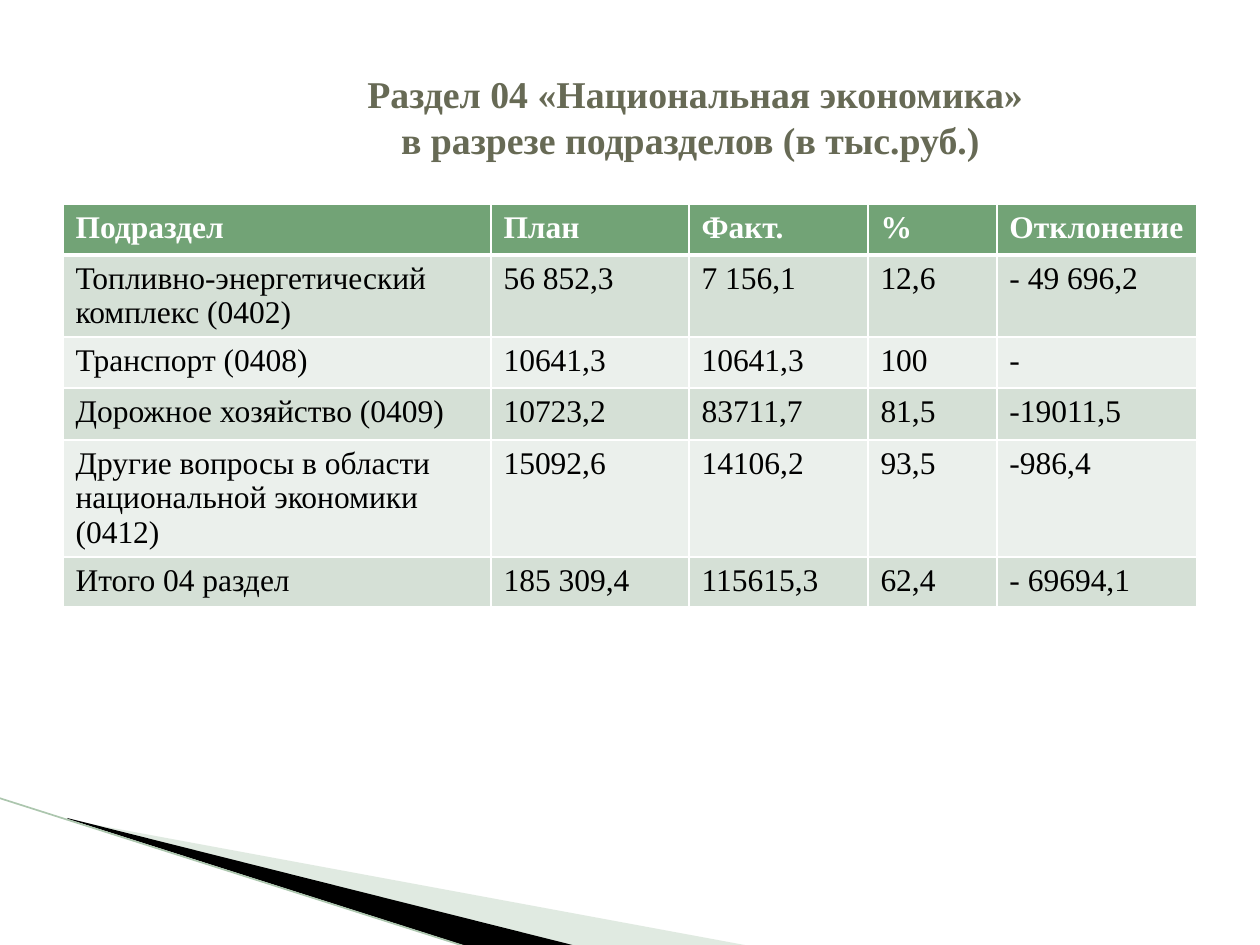
import pptx
import pptx.util
import pptx.dml.color
import pptx.enum.text
import pptx.oxml
import pptx.oxml.ns
from dataclasses import dataclass
from lxml import etree

PX = 914400 / 126


@dataclass(frozen=True)
class Theme:
    font: str = "Times New Roman"
    title_size: float = 21.6
    title_leading: float = 26.3
    cell_size: float = 18
    cell_leading: float = 19.8
    title: str = "676A55"
    white: str = "FFFFFF"
    black: str = "000000"
    header: str = "72A376"
    bands: tuple = ("D5E0D6", "EBF0EC")
    wedge: str = "B3CBB5"
    edge: str = "ACC6AE"


T = Theme()
TITLE = (" Раздел 04 «Национальная экономика»", "в разрезе подразделов (в тыс.руб.)")
COLS = (428, 198, 179, 129, 200)
ROWS = (51, 82, 51, 52, 117, 50)
DATA = (
    ("Подраздел", "План", "Факт.", "%", "Отклонение"),
    ("Топливно-энергетический комплекс (0402)", "56 852,3", "7 156,1", "12,6", "- 49 696,2"),
    ("Транспорт (0408)", "10641,3", "10641,3", "100", "-"),
    ("Дорожное хозяйство (0409)", "10723,2", "83711,7", "81,5", "-19011,5"),
    ("Другие вопросы в области национальной экономики\n(0412)", "15092,6", "14106,2", "93,5", "-986,4"),
    ("Итого 04 раздел", "185 309,4", "115615,3", "62,4", "- 69694,1"),
)


def px(n):
    return pptx.util.Emu(round(n * PX))


def rgb(c):
    return pptx.dml.color.RGBColor.from_string(c)


def apply(obj, values):
    for name, value in values.items():
        setattr(obj, name, value)


def paint(fill, color):
    fill.solid()
    fill.fore_color.rgb = rgb(color)


def write(tf, lines, size, leading, color, bold, align=None):
    for i, line in enumerate(lines):
        p = tf.paragraphs[0] if i == 0 else tf.add_paragraph()
        apply(p, {"alignment": align, "line_spacing": pptx.util.Pt(leading)})
        r = p.add_run()
        r.text = line
        apply(r.font, {"name": T.font, "size": pptx.util.Pt(size), "bold": bold})
        r.font.color.rgb = rgb(color)


def add_wedge(slide, points, color, alpha=None):
    start, *rest = [(px(x), px(y)) for x, y in points]
    fb = slide.shapes.build_freeform(*start)
    fb.add_line_segments(rest, close=True)
    sp = fb.convert_to_shape()
    sp.shadow.inherit = False
    sp.line.fill.background()
    paint(sp.fill, color)
    if alpha:
        clr = sp.fill._xPr.find(".//" + pptx.oxml.ns.qn("a:srgbClr"))
        etree.SubElement(clr, pptx.oxml.ns.qn("a:alpha")).set("val", str(alpha * 1000))


def add_edge(slide, x1, y1, x2, y2):
    line = slide.shapes.add_connector(
        pptx.enum.shapes.MSO_CONNECTOR.STRAIGHT, px(x1), px(y1), px(x2), px(y2))
    line.line.color.rgb = rgb(T.edge)
    line.line.width = pptx.util.Pt(0.95)
    etree.SubElement(line._element.spPr, pptx.oxml.ns.qn("a:effectLst"))


def add_title(slide, x, y, w, h):
    tf = slide.shapes.add_textbox(px(x), px(y), px(w), px(h)).text_frame
    apply(tf, {"word_wrap": True, "margin_top": px(15),
               "vertical_anchor": pptx.enum.text.MSO_ANCHOR.TOP})
    write(tf, TITLE, T.title_size, T.title_leading, T.title, True,
          pptx.enum.text.PP_ALIGN.CENTER)


def set_borders(cell, widths):
    tcPr = cell._tc.get_or_add_tcPr()
    for side, width in widths.items():
        tcPr.append(pptx.oxml.parse_xml(
            f'<a:ln{side} {pptx.oxml.ns.nsdecls("a")} w="{pptx.util.Pt(width)}">'
            f'<a:solidFill><a:srgbClr val="{T.white}"/></a:solidFill></a:ln{side}>'))


def add_budget_table(slide, x, y):
    table = slide.shapes.add_table(
        len(ROWS), len(COLS), px(x), px(y), px(sum(COLS)), px(sum(ROWS))).table
    for col, w in zip(table.columns, COLS):
        col.width = px(w)
    for i, (row, h) in enumerate(zip(table.rows, ROWS)):
        row.height = px(h)
        head = i == 0
        for cell, text in zip(row.cells, DATA[i]):
            # Heavier rule between the header and the body
            set_borders(cell, {"L": 1, "R": 1, "T": 3 if i == 1 else 1, "B": 3 if head else 1})
            paint(cell.fill, T.header if head else T.bands[(i - 1) % 2])
            write(cell.text_frame, text.split("\n"), T.cell_size, T.cell_leading,
                  T.white if head else T.black, head)


def main():
    prs = pptx.Presentation()
    prs.slide_width, prs.slide_height = px(1260), px(945)
    slide = prs.slides.add_slide(prs.slide_layouts[6])
    paint(slide.background.fill, T.white)

    # Corner decoration
    add_wedge(slide, [(69, 820), (750, 946), (575, 946), (69, 819)], T.wedge, 40)
    add_wedge(slide, [(67, 818), (576, 946), (469, 947), (68, 819)], T.black)
    add_edge(slide, -1, 798, 467, 947)

    # Heading and figures
    add_title(slide, 184, 55, 1013, 203)
    add_budget_table(slide, 63, 204)
    prs.save("out.pptx")


if __name__ == "__main__":
    main()
